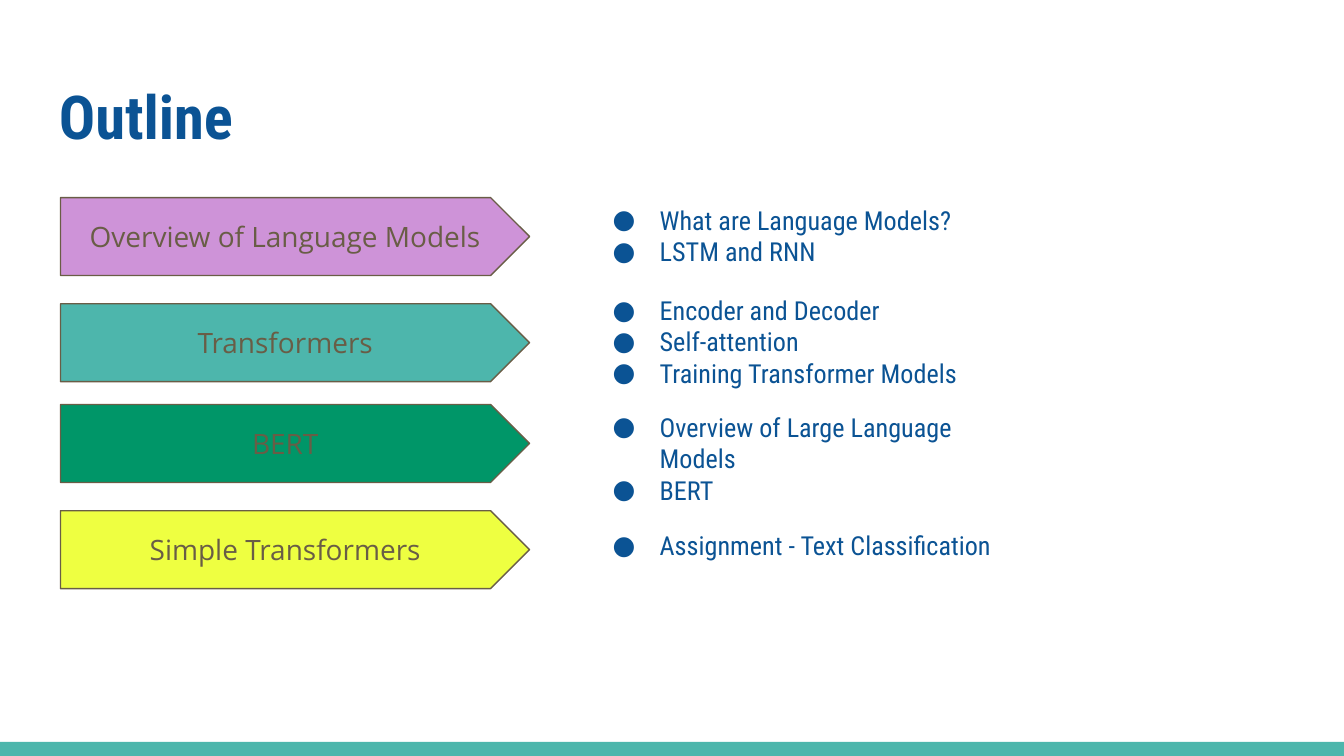
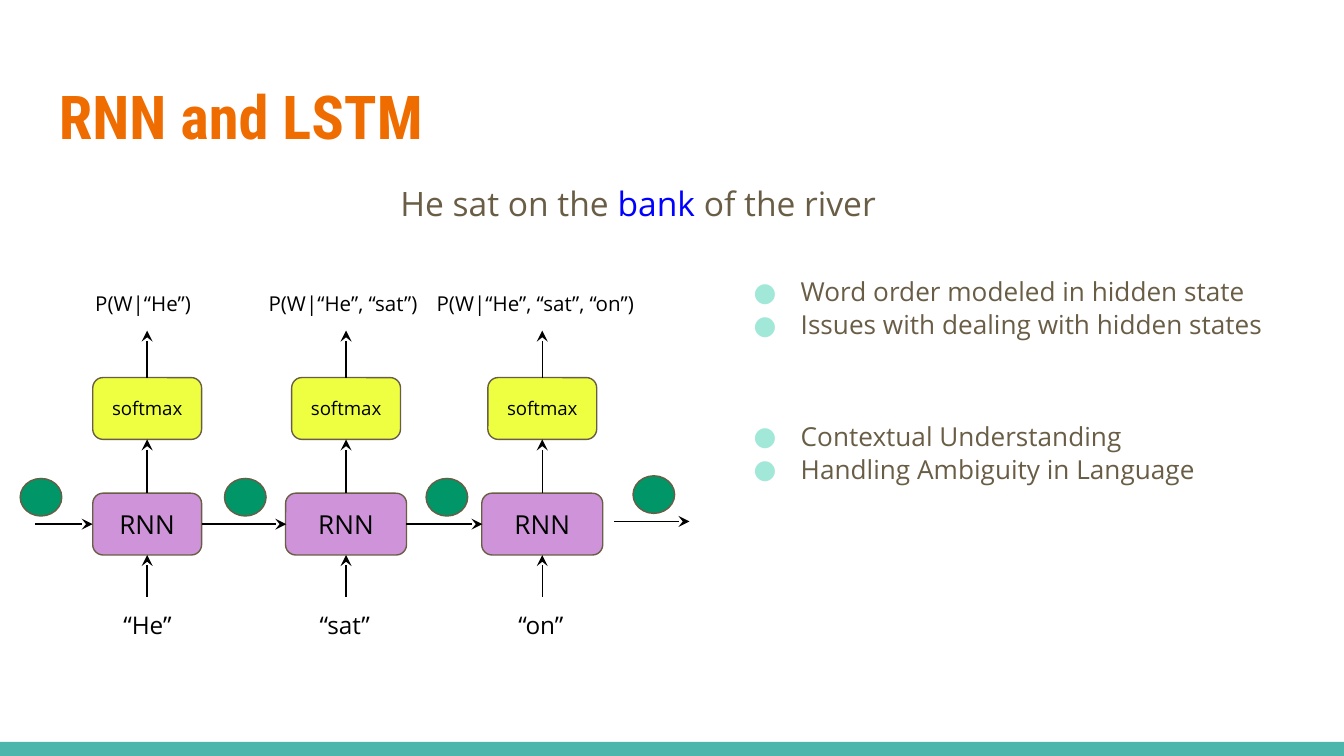
from lxml import etree
from pptx import Presentation
from pptx.dml.color import RGBColor
from pptx.enum.shapes import MSO_CONNECTOR as CONN, MSO_SHAPE as SHAPE
from pptx.enum.text import MSO_ANCHOR as ANCHOR, PP_ALIGN as ALIGN
from pptx.oxml.ns import qn
from pptx.util import Inches, Pt

SANS, CONDENSED = "Open Sans", "Roboto Condensed"
TEAL, PURPLE, GREEN, YELLOW = "4DB6AC", "CE93D8", "009668", "EEFF41"
BROWN, NAVY, ORANGE, BLUE, MINT, BLACK = (
    "695D46", "0B5394", "EF6C00", "0000FF", "A1E8D9", "000000")


def rgb(color):
    """Turn a hex string into a colour."""
    return RGBColor.from_string(color)


def set_frame(shape, anchor=ANCHOR.TOP):
    """Give a shape's text frame its margins, wrapping and anchor."""
    tf = shape.text_frame
    tf.word_wrap = True
    tf.vertical_anchor = anchor
    tf.margin_left = tf.margin_right = Inches(0.1)
    tf.margin_top = tf.margin_bottom = Inches(0.1)
    return tf


def add_run(p, text, size=14, font=SANS, color=BROWN, bold=False):
    """Append a formatted run to a paragraph."""
    r = p.add_run()
    r.text = text
    r.font.size, r.font.name, r.font.bold = Pt(size), font, bold
    r.font.color.rgb = rgb(color)


def add_text(s, box, text, **fmt):
    """Add a text box holding one paragraph, or one made of (text, format) runs."""
    sp = s.shapes.add_textbox(*map(Inches, box))
    p = set_frame(sp).paragraphs[0]
    for part, extra in [(text, {})] if isinstance(text, str) else text:
        add_run(p, part, **{**fmt, **extra})


def add_bullets(s, box, items, bullet, spacing=None, gaps=None, font=SANS, **fmt):
    """Add a bulleted list; gaps maps an item's index to the space before it."""
    tf = set_frame(s.shapes.add_textbox(*map(Inches, box)))
    for i, item in enumerate(items):
        p = tf.paragraphs[0] if i == 0 else tf.add_paragraph()
        pPr = p._p.get_or_add_pPr()
        pPr.set("marL", str(Inches(0.5)))
        pPr.set("indent", str(-Inches(0.35)))
        clr = etree.SubElement(pPr, qn("a:buClr"))
        etree.SubElement(clr, qn("a:srgbClr"), val=bullet)
        etree.SubElement(pPr, qn("a:buFont"), typeface=font)
        etree.SubElement(pPr, qn("a:buChar"), char="●")
        if spacing:
            p.line_spacing = spacing
        if gaps and i in gaps:
            p.space_before = Pt(gaps[i])
        add_run(p, item, font=font, **fmt)


def add_block(s, kind, box, fill, text=None, line=BROWN, **fmt):
    """Add a filled preset shape with optional centred text."""
    sp = s.shapes.add_shape(kind, *map(Inches, box))
    sp.shadow.inherit = False
    sp.fill.solid()
    sp.fill.fore_color.rgb = rgb(fill)
    if line:
        sp.line.color.rgb = rgb(line)
        sp.line.width = Pt(0.75)
    else:
        sp.line.fill.background()
    if text:
        p = set_frame(sp, ANCHOR.MIDDLE).paragraphs[0]
        p.alignment = ALIGN.CENTER
        add_run(p, text, **fmt)


def add_arrow(s, x1, y1, x2, y2):
    """Add a thin black arrow."""
    cn = s.shapes.add_connector(CONN.STRAIGHT, *map(Inches, (x1, y1, x2, y2)))
    cn.line.color.rgb = rgb(BLACK)
    cn.line.width = Pt(0.75)
    etree.SubElement(cn.line._get_or_add_ln(), qn("a:tailEnd"), type="stealth")
    etree.SubElement(cn._element.spPr, qn("a:effectLst"))


def add_base(prs, title, color):
    """Add a slide with the bottom band and its title."""
    s = prs.slides.add_slide(prs.slide_layouts[6])
    add_block(s, SHAPE.RECTANGLE, (0, 5.52, 10, 0.11), TEAL, line=None)
    add_text(s, (0.34, 0.49, 9.32, 0.77), title, size=32.4, font=CONDENSED,
             color=color, bold=True)
    return s


def add_topic(s, box, topic, fill, items, list_dy, list_h):
    """Add a topic pennant and, to its right, the list of its contents."""
    x, y, w, h = box
    add_block(s, SHAPE.PENTAGON, box, fill, topic, size=15)
    add_bullets(s, (x + w + 0.37, y + list_dy, 3.28, list_h), items, NAVY,
                font=CONDENSED, color=NAVY)


def add_step(s, box, word, word_x, word_w, prob, prob_x, prob_w, rnn_w):
    """Add one time step: word, RNN cell, softmax and probability, bottom up."""
    x, y, w, h = box
    cx = x + w / 2
    cell_h, soft_y, rnn_y, word_y = 0.46, y + 0.74, y + 1.6, y + h - 0.42
    add_text(s, (prob_x, y, prob_w, 0.39), prob, size=11, color=BLACK)
    add_block(s, SHAPE.ROUNDED_RECTANGLE, (x, soft_y, w, cell_h), YELLOW,
              "softmax", size=10, color=BLACK)
    add_block(s, SHAPE.ROUNDED_RECTANGLE, (cx - rnn_w / 2, rnn_y, rnn_w, cell_h),
              PURPLE, "RNN", color=BLACK)
    add_text(s, (word_x, word_y, word_w, 0.42), word, size=13, color=BLACK)
    for start, end in ((word_y, rnn_y + cell_h), (rnn_y, soft_y + cell_h),
                       (soft_y, y + 0.39)):
        add_arrow(s, cx, start, cx, end)


def add_state(s, oval_x, oval_y, start, end):
    """Add a hidden state and the arrow that carries it onward."""
    add_block(s, SHAPE.OVAL, (oval_x, oval_y, 0.31, 0.28), GREEN)
    add_arrow(s, start, oval_y + 0.34, end, oval_y + 0.34)


def build_outline(prs):
    """Build the outline slide."""
    s = add_base(prs, "Outline", NAVY)
    topics = [
        (1.47, "Overview of Language Models", PURPLE,
         ["What are Language Models?", "LSTM and RNN"], -0.05, 0.67),
        (2.26, "Transformers", TEAL,
         ["Encoder and Decoder", "Self-attention", "Training Transformer Models"],
         -0.17, 0.91),
        (3.01, "BERT", GREEN,
         ["Overview of Large Language Models", "BERT"], -0.05, 0.67),
        (3.8, "Simple Transformers", YELLOW,
         ["Assignment - Text Classification"], 0.04, 0.44),
    ]
    for y, *topic in topics:
        add_topic(s, (0.45, y, 3.49, 0.58), *topic)


def build_rnn(prs):
    """Build the RNN and LSTM slide."""
    s = add_base(prs, "RNN and LSTM", ORANGE)
    add_text(s, (2.88, 1.26, 4.88, 0.46),
             [("He sat on the ", {}), ("bank", {"color": BLUE}),
              (" of the river", {})], size=18)
    steps = [
        (0.69, "“He”", 0.82, 0.6, "P(W|“He”)", 0.61, 0.98, 0.81),
        (2.17, "“sat”", 2.28, 0.67, "P(W|“He”, “sat”)", 1.9, 1.37, 0.9),
        (3.63, "“on”", 3.76, 0.67, "P(W|“He”, “sat”, “on”)", 3.15, 1.78, 0.9),
    ]
    for x, *step in steps:
        add_step(s, (x, 2.07, 0.81, 2.79), *step)
    for state in ((0.15, 3.56, 0.26, 0.69), (1.67, 3.56, 1.5, 2.13),
                  (3.17, 3.56, 3.02, 3.59), (4.71, 3.54, 4.57, 5.13)):
        add_state(s, *state)
    add_bullets(s, (5.36, 1.94, 4.34, 2.99),
                ["Word order modeled in hidden state",
                 "Issues with dealing with hidden states",
                 "Contextual Understanding",
                 "Handling Ambiguity in Language"],
                MINT, spacing=1.05, gaps={2: 42})


def main():
    """Build and save the presentation."""
    prs = Presentation()
    prs.slide_width = Inches(10)
    prs.slide_height = prs.slide_width * 9 // 16
    build_outline(prs)
    build_rnn(prs)
    prs.save("out.pptx")


if __name__ == "__main__":
    main()
